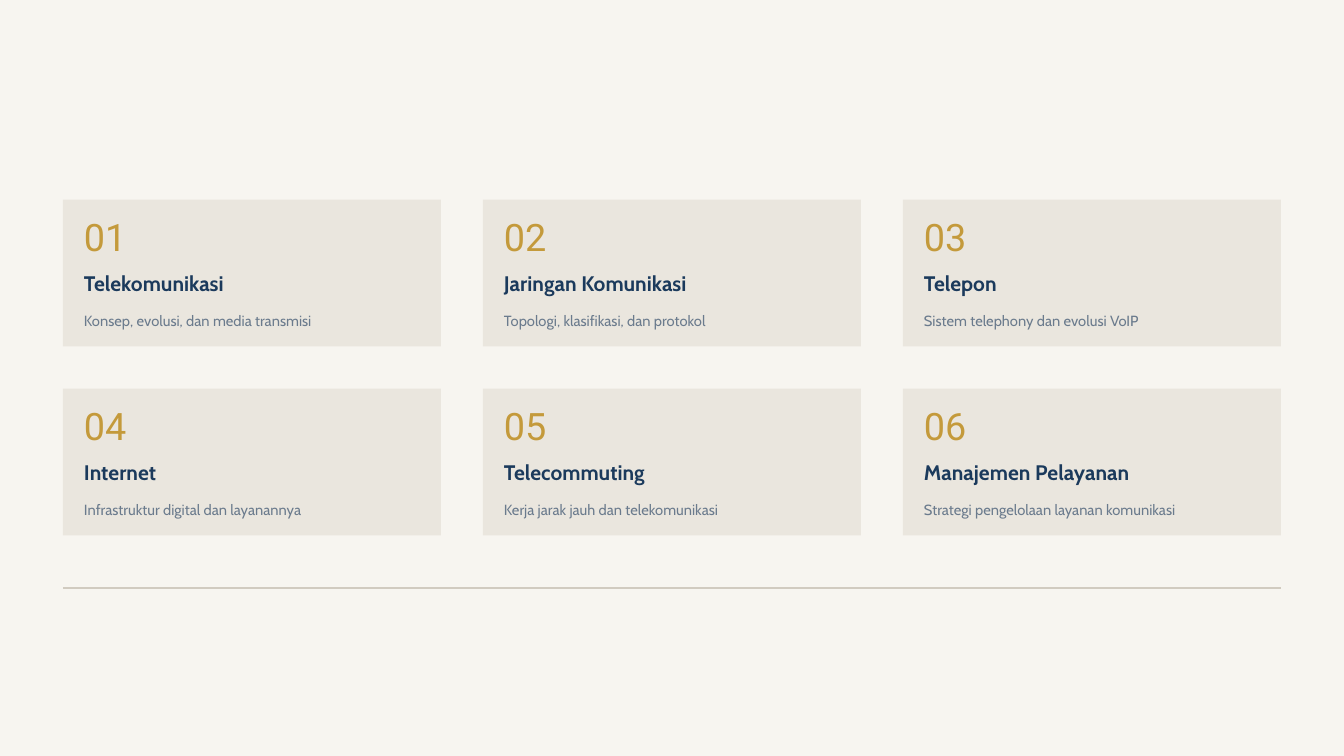
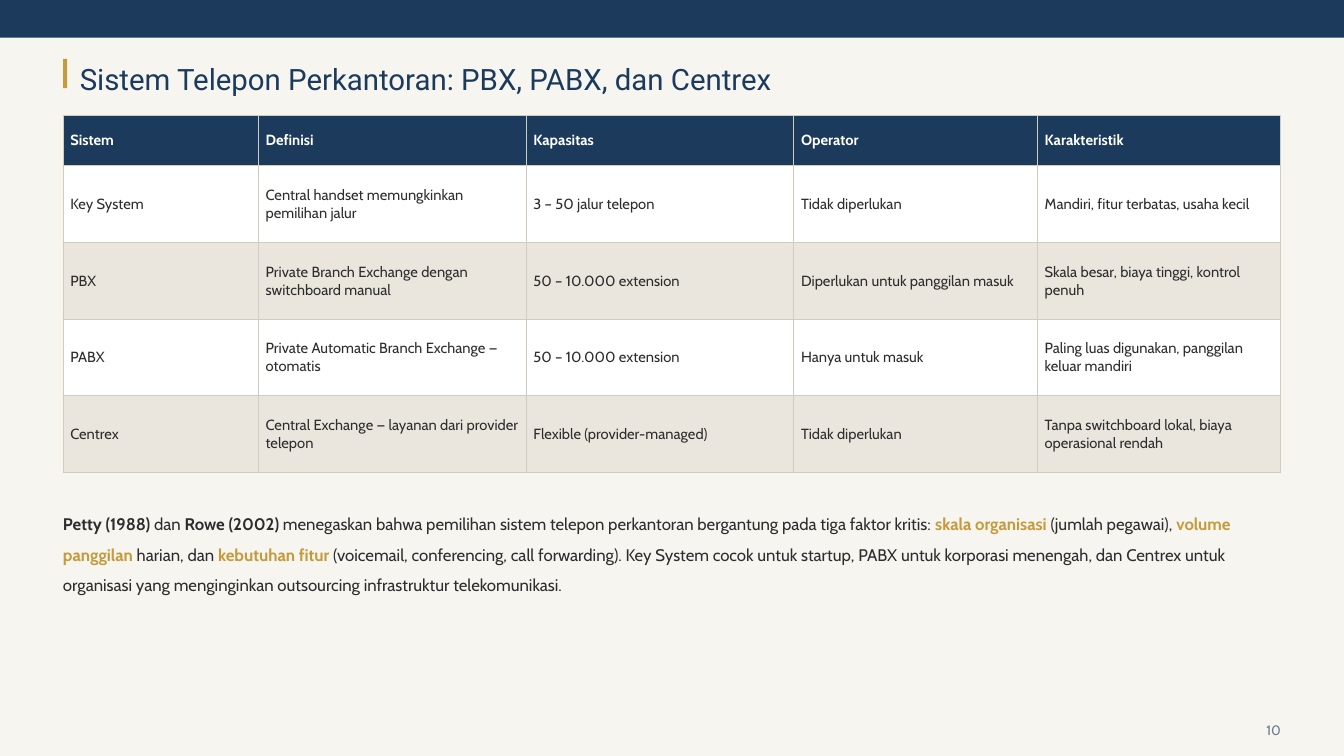
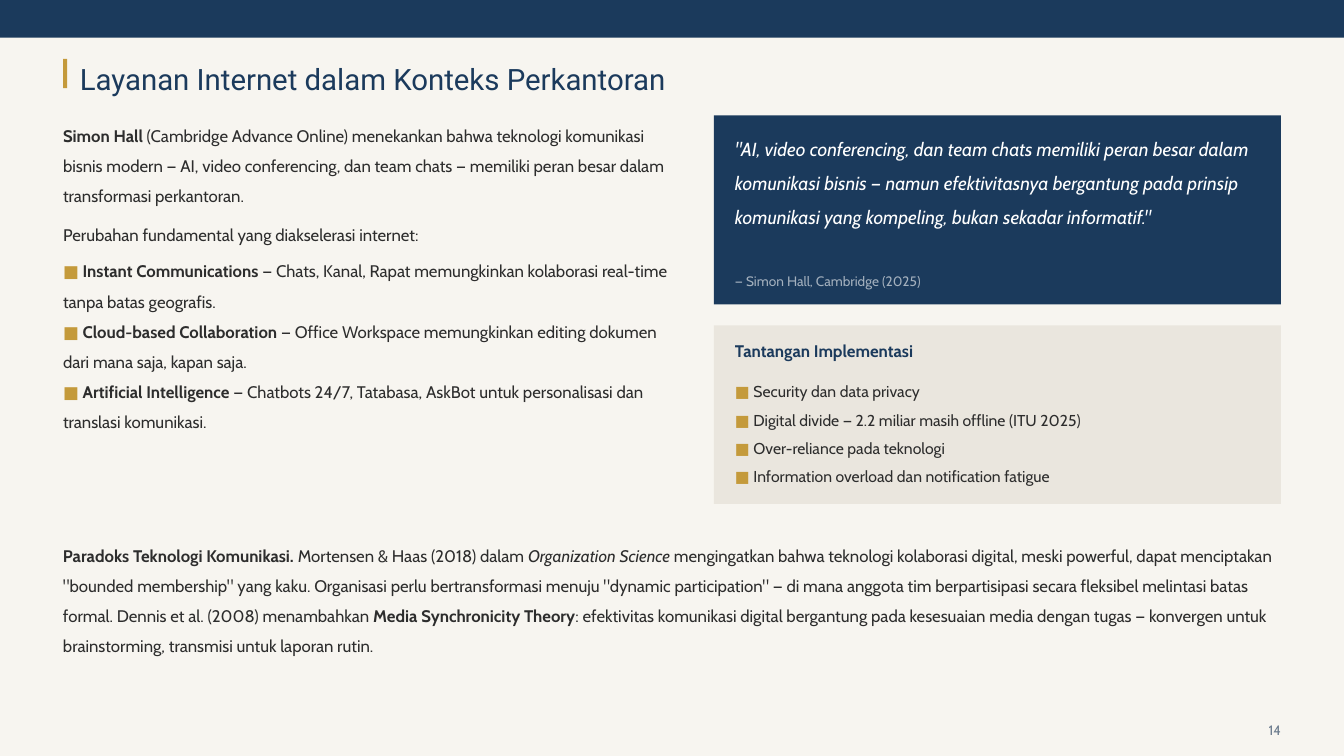
from lxml import etree
from pptx import Presentation
from pptx.dml.color import RGBColor
from pptx.enum.shapes import MSO_CONNECTOR, MSO_SHAPE
from pptx.enum.text import MSO_ANCHOR, PP_ALIGN
from pptx.oxml.ns import qn
from pptx.util import Pt

RECT = MSO_SHAPE.RECTANGLE
LINE = MSO_CONNECTOR.STRAIGHT
TOP, MIDDLE = MSO_ANCHOR.TOP, MSO_ANCHOR.MIDDLE
RIGHT = PP_ALIGN.RIGHT

CREAM = RGBColor(0xF7, 0xF5, 0xF0)
SAND = RGBColor(0xEA, 0xE6, 0xDE)
RULE = RGBColor(0xD1, 0xCB, 0xC0)
NAVY = RGBColor(0x1B, 0x3A, 0x5C)
GOLD = RGBColor(0xC4, 0x9A, 0x3B)
GRAY = RGBColor(0x6B, 0x7B, 0x8D)
INK = RGBColor(0x2D, 0x2D, 0x2D)
WHITE = RGBColor(0xFF, 0xFF, 0xFF)
BODY, HEAD = "Cabin", "Roboto"
LEFT, WIDE = 60, 1160


def box(slide, x, y, w, h, fill=None, wrap=False):
    """Add a filled block, or a text box when no fill is given."""
    area = Pt(x), Pt(y), Pt(w), Pt(h)
    if fill is not None:
        shape = slide.shapes.add_shape(RECT, *area)
        shape.shadow.inherit = False
        shape.fill.solid()
        shape.fill.fore_color.rgb = fill
        shape.line.fill.background()
        return shape.text_frame
    frame = slide.shapes.add_textbox(*area).text_frame
    frame.word_wrap = wrap
    frame.vertical_anchor = TOP if wrap else MIDDLE
    frame.margin_left = frame.margin_right = 0
    frame.margin_top = frame.margin_bottom = 0
    return frame


def write(frame, *paras, size=16, color=INK, font=BODY, bold=False,
          italic=False, space=None, before=(), align=None):
    """Write paragraphs; each is a string or a list of (text, marks) runs.

    Marks: b bold, i italic, g gold.
    """
    for n, runs in enumerate(paras):
        para = frame.add_paragraph() if n else frame.paragraphs[0]
        para.line_spacing = space
        para.alignment = align
        if n < len(before) and before[n]:
            para.space_before = Pt(before[n])
        for text, marks in [(runs, "")] if isinstance(runs, str) else runs:
            run = para.add_run()
            run.text = text
            run.font.name = font
            run.font.size = Pt(size)
            run.font.bold = bold or "b" in marks
            run.font.italic = italic or "i" in marks
            run.font.color.rgb = GOLD if "g" in marks else color


deck = Presentation()
deck.slide_width, deck.slide_height = Pt(1280), Pt(720)

# Shared frame: background, and on titled slides the band, title and number
heads = [
    None,
    ("Sistem Telepon Perkantoran: PBX, PABX, dan Centrex", "10"),
    ("Layanan Internet dalam Konteks Perkantoran", "14"),
]
slides = []
for head in heads:
    slide = deck.slides.add_slide(deck.slide_layouts[6])
    slide.background.fill.solid()
    slide.background.fill.fore_color.rgb = CREAM
    slides.append(slide)
    if head:
        title, number = head
        box(slide, 0, 0, 1280, 36, NAVY)
        box(slide, LEFT, 56, 4, 28, GOLD)
        write(box(slide, 76, 52, 800, 36), title,
              size=28, color=NAVY, font=HEAD, space=1.3)
        write(box(slide, 1140, 680, 80, 24), number,
              size=13, color=GRAY, space=1.4, align=RIGHT)
agenda, phones, net = slides

# Agenda: grid of six topic cards
topics = [
    ("Telekomunikasi", "Konsep, evolusi, dan media transmisi"),
    ("Jaringan Komunikasi", "Topologi, klasifikasi, dan protokol"),
    ("Telepon", "Sistem telephony dan evolusi VoIP"),
    ("Internet", "Infrastruktur digital dan layanannya"),
    ("Telecommuting", "Kerja jarak jauh dan telekomunikasi"),
    ("Manajemen Pelayanan", "Strategi pengelolaan layanan komunikasi"),
]
for n, (topic, about) in enumerate(topics):
    row, col = divmod(n, 3)
    x, y = LEFT + 400 * col, 190 + 180 * row
    box(agenda, x, y, 360, 140, SAND)
    write(box(agenda, x + 20, y + 10, 80, 50), f"{n + 1:02}",
          size=36, color=GOLD, font=HEAD)
    write(box(agenda, x + 20, y + 65, 320, 30), topic,
          size=20, color=NAVY, bold=True)
    write(box(agenda, x + 20, y + 100, 320, 30), about, size=14, color=GRAY)

# Agenda: closing rule
rule = agenda.shapes.add_connector(LINE, Pt(LEFT), Pt(560),
                                   Pt(LEFT + WIDE), Pt(560))
rule.line.color.rgb = RULE
rule.line.width = Pt(1)
etree.SubElement(rule._element.spPr, qn("a:effectLst"))

# Phones: comparison table
rows = [
    ("Sistem", "Definisi", "Kapasitas", "Operator", "Karakteristik"),
    ("Key System", "Central handset memungkinkan pemilihan jalur",
     "3 – 50 jalur telepon", "Tidak diperlukan",
     "Mandiri, fitur terbatas, usaha kecil"),
    ("PBX", "Private Branch Exchange dengan switchboard manual",
     "50 – 10.000 extension", "Diperlukan untuk panggilan masuk",
     "Skala besar, biaya tinggi, kontrol penuh"),
    ("PABX", "Private Automatic Branch Exchange — otomatis",
     "50 – 10.000 extension", "Hanya untuk masuk",
     "Paling luas digunakan, panggilan keluar mandiri"),
    ("Centrex", "Central Exchange — layanan dari provider telepon",
     "Flexible (provider-managed)", "Tidak diperlukan",
     "Tanpa switchboard lokal, biaya operasional rendah"),
]
table = phones.shapes.add_table(len(rows), len(rows[0]), Pt(LEFT), Pt(110),
                                Pt(WIDE), Pt(340)).table
for col, width in zip(table.columns, (186, 255, 255, 232, 232)):
    col.width = Pt(width)
for r, texts in enumerate(rows):
    table.rows[r].height = Pt(73 if r else 48)
    for c, text in enumerate(texts):
        cell = table.cell(r, c)
        cell.vertical_anchor = MIDDLE
        cell.margin_left = cell.margin_right = Pt(7)
        cell.margin_top = cell.margin_bottom = 0
        write(cell.text_frame, text, size=14, bold=r == 0,
              color=INK if r else WHITE)
        # Borders must come before the fill in the cell properties
        props = cell._tc.get_or_add_tcPr()
        for side in ("a:lnL", "a:lnR", "a:lnT", "a:lnB"):
            edge = etree.SubElement(props, qn(side), w=str(Pt(1)))
            paint = etree.SubElement(edge, qn("a:solidFill"))
            etree.SubElement(paint, qn("a:srgbClr"), val=str(RULE))
        cell.fill.solid()
        cell.fill.fore_color.rgb = (
            NAVY if r == 0 else WHITE if r % 2 else SAND)

# Phones: summary
write(box(phones, LEFT, 480, WIDE, 110, wrap=True), [
    ("Petty (1988)", "b"), (" dan ", ""), ("Rowe (2002)", "b"),
    (" menegaskan bahwa pemilihan sistem telepon perkantoran bergantung "
     "pada tiga faktor kritis: ", ""),
    ("skala organisasi", "bg"), (" (jumlah pegawai), ", ""),
    ("volume panggilan", "bg"), (" harian, dan ", ""),
    ("kebutuhan fitur", "bg"),
    (" (voicemail, conferencing, call forwarding). Key System cocok untuk "
     "startup, PABX untuk korporasi menengah, dan Centrex untuk organisasi "
     "yang menginginkan outsourcing infrastruktur telekomunikasi.", ""),
], space=1.5)

# Net: main text with its marked items
shifts = [
    ("Instant Communications", "Chats, Kanal, Rapat memungkinkan kolaborasi "
     "real-time tanpa batas geografis."),
    ("Cloud-based Collaboration", "Office Workspace memungkinkan editing "
     "dokumen dari mana saja, kapan saja."),
    ("Artificial Intelligence", "Chatbots 24/7, Tatabasa, AskBot untuk "
     "personalisasi dan translasi komunikasi."),
]
write(box(net, LEFT, 110, 580, 370, wrap=True),
      [("Simon Hall", "b"),
       (" (Cambridge Advance Online) menekankan bahwa teknologi komunikasi "
        "bisnis modern — AI, video conferencing, dan team chats — memiliki "
        "peran besar dalam transformasi perkantoran.", "")],
      "Perubahan fundamental yang diakselerasi internet:",
      *[[("■ ", "g"), (name, "b"), (f" — {text}", "")]
        for name, text in shifts],
      space=1.5, before=(0, 8, 6))

# Net: quote
box(net, 680, 110, 540, 180, NAVY)
write(box(net, 700, 120, 500, 135, wrap=True),
      '"AI, video conferencing, dan team chats memiliki peran besar dalam '
      'komunikasi bisnis — namun efektivitasnya bergantung pada prinsip '
      'komunikasi yang kompeling, bukan sekadar informatif."',
      size=18, color=WHITE, italic=True, space=1.5)
source = box(net, 700, 258, 500, 20)
write(source, "— Simon Hall, Cambridge (2025)", size=13, color=WHITE)
tint = source.paragraphs[0].runs[0]._r.find(".//" + qn("a:srgbClr"))
etree.SubElement(tint, qn("a:alpha"), val="60000")

# Net: challenges
risks = [
    "Security dan data privacy",
    "Digital divide — 2.2 miliar masih offline (ITU 2025)",
    "Over-reliance pada teknologi",
    "Information overload dan notification fatigue",
]
box(net, 680, 310, 540, 170, SAND)
write(box(net, 700, 320, 500, 28), "Tantangan Implementasi",
      color=NAVY, bold=True)
write(box(net, 700, 355, 500, 115, wrap=True),
      *[[("■", "g"), (f" {risk}", "")] for risk in risks],
      size=15, space=1.5)

# Net: closing paragraph
write(box(net, LEFT, 510, WIDE, 140, wrap=True), [
    ("Paradoks Teknologi Komunikasi.", "b"),
    (" Mortensen & Haas (2018) dalam ", ""),
    ("Organization Science", "i"),
    (" mengingatkan bahwa teknologi kolaborasi digital, meski powerful, "
     'dapat menciptakan "bounded membership" yang kaku. Organisasi perlu '
     'bertransformasi menuju "dynamic participation" — di mana anggota tim '
     "berpartisipasi secara fleksibel melintasi batas formal. Dennis et al. "
     "(2008) menambahkan ", ""),
    ("Media Synchronicity Theory", "b"),
    (": efektivitas komunikasi digital bergantung pada kesesuaian media "
     "dengan tugas — konvergen untuk brainstorming, transmisi untuk laporan "
     "rutin.", ""),
], space=1.5)

deck.save("out.pptx")
